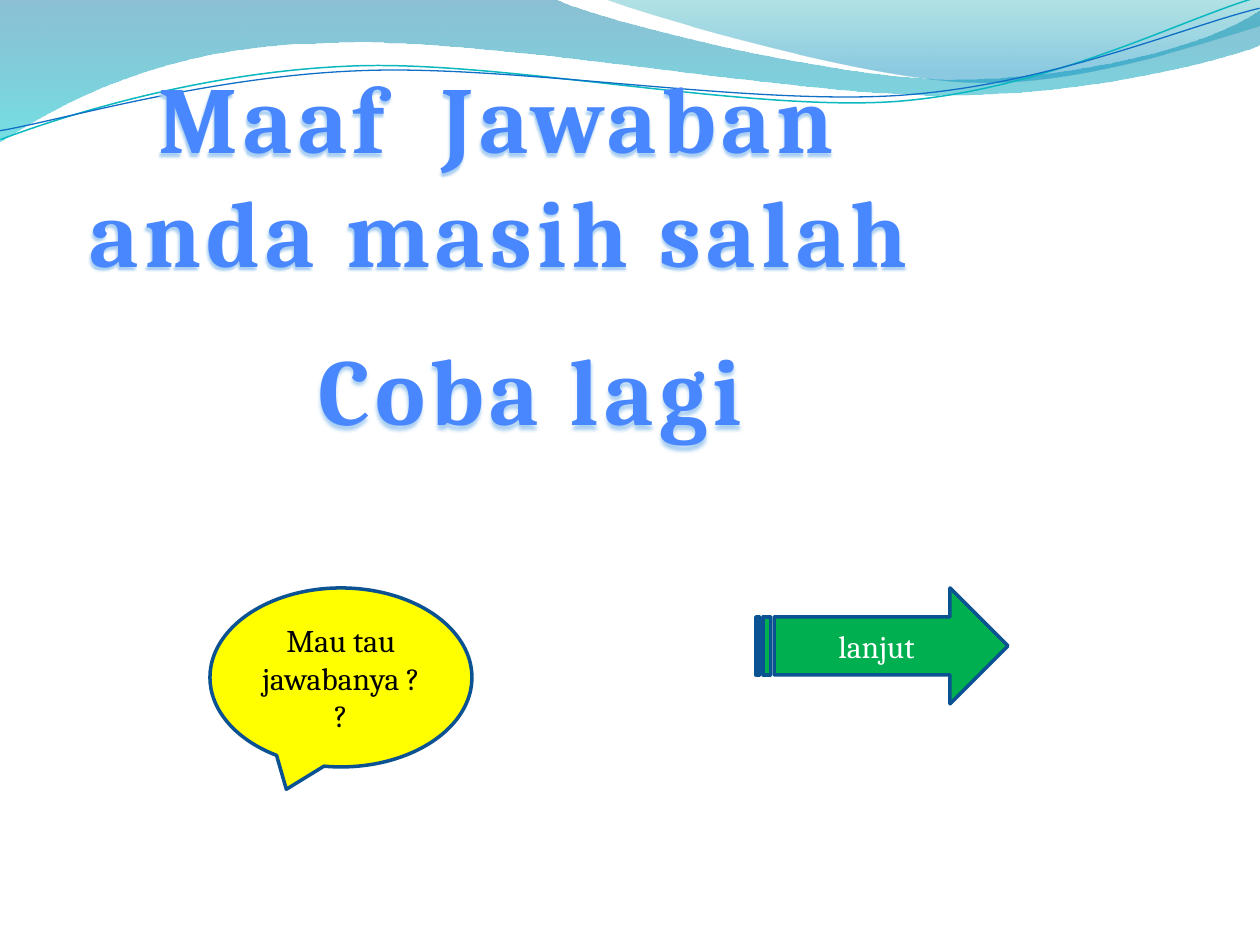
import pptx
import pptx.util
import pptx.dml.color
import pptx.enum.shapes
import pptx.enum.text
import pptx.oxml
import pptx.oxml.ns
import lxml.etree

EMU_PER_PX = 914400 / 126
FONT = "Cambria"
RIPPLE_TILT = 357.3
COLOURS = {
    "heading": "4987FF",
    "glow": "A9CFF2",
    "outline": "0B5292",
    "arrow": "00B050",
    "callout": "FFFF00",
    "white": "FFFFFF",
    "black": "000000",
    "wave_deep": "0074A1",
    "wave_aqua": "00C6CF",
    "crest_teal": "00A1A9",
    "crest_blue": "008BBF",
    "line_teal": "0AB8BF",
    "line_blue": "0F6FC6",
}


def px(value):
    """Turn pixels into EMU."""
    return pptx.util.Emu(round(value * EMU_PER_PX))


def colour(name):
    """Return a named colour."""
    return pptx.dml.color.RGBColor.from_string(COLOURS[name])


def add_outline(page, points, kinds, close):
    """Draw a freeform whose kinds name each piece L for line or C for curve."""
    vertices = [(px(x), px(y)) for x, y in points]
    builder = page.shapes.build_freeform(*vertices[0], scale=1.0)
    builder.add_line_segments(vertices[1:], close=close)
    shape = builder.convert_to_shape()
    shape.shadow.inherit = False
    pieces = iter(list(shape._element.iter(pptx.oxml.ns.qn("a:lnTo"))))
    for kind in kinds:
        piece = next(pieces)
        if kind == "C":
            bend = lxml.etree.Element(pptx.oxml.ns.qn("a:cubicBezTo"))
            piece.addprevious(bend)
            for corner in (piece, next(pieces), next(pieces)):
                bend.append(corner[0])
                corner.getparent().remove(corner)
    return shape


def add_wave(page, points, kinds, stops):
    """Add a wave filled from top to bottom with see-through colours."""
    wave = add_outline(page, points, kinds, close=True)
    wave.line.fill.background()
    wave.fill.gradient()
    wave.fill.gradient_angle = 270
    for stop, (position, name, opacity) in zip(wave.fill.gradient_stops, stops):
        stop.position = position
        stop.color.rgb = colour(name)
    tints = wave._element.iter(pptx.oxml.ns.qn("a:srgbClr"))
    for tint, (position, name, opacity) in zip(tints, stops):
        alpha = lxml.etree.SubElement(tint, pptx.oxml.ns.qn("a:alpha"))
        alpha.set("val", str(opacity * 1000))


def add_ripple(page, points, name, width):
    """Add a thin, slightly tilted open curve."""
    ripple = add_outline(page, points, "CCC", close=False)
    ripple.fill.background()
    ripple.line.color.rgb = colour(name)
    ripple.line.width = pptx.util.Pt(width)
    ripple.rotation = RIPPLE_TILT
    return ripple


def write_text(box, text, size=18, name="black", bold=False, spacing=0, anchor="MIDDLE"):
    """Put centred text in a box."""
    frame = box.text_frame
    frame.word_wrap = True
    frame.vertical_anchor = getattr(pptx.enum.text.MSO_ANCHOR, anchor)
    para = frame.paragraphs[0]
    para.alignment = pptx.enum.text.PP_ALIGN.CENTER
    span = para.add_run()
    span.text = text
    span.font.name = FONT
    span.font.size = pptx.util.Pt(size)
    span.font.bold = bold
    span.font.color.rgb = colour(name)
    if spacing:
        span._r.get_or_add_rPr().set("spc", str(spacing * 100))


def place(box, left, top, width, height):
    """Set a box's position and size in pixels."""
    box.left, box.top, box.width, box.height = map(px, (left, top, width, height))


def add_glow(box):
    """Give the text of an unfilled box a soft shadow."""
    box.fill.background()
    box._element.spPr.append(pptx.oxml.parse_xml(
        f'<a:effectLst {pptx.oxml.ns.nsdecls("a")}>'
        '<a:outerShdw blurRad="12700" dist="25400" dir="7200000" algn="tl" rotWithShape="0">'
        f'<a:srgbClr val="{COLOURS["glow"]}"/></a:outerShdw></a:effectLst>'))


def write_heading(box, text, bounds):
    """Format a box as a large glowing heading."""
    place(box, *bounds)
    write_text(box, text, size=54, name="heading", bold=True, spacing=3, anchor="TOP")
    box.text_frame.auto_size = pptx.enum.text.MSO_AUTO_SIZE.SHAPE_TO_FIT_TEXT
    add_glow(box)


def add_button(page, kind, text, bounds, fill, text_colour):
    """Add an outlined preset shape with a label."""
    preset = getattr(pptx.enum.shapes.MSO_SHAPE, kind)
    button = page.shapes.add_shape(preset, *map(px, bounds))
    button.shadow.inherit = False
    button.fill.solid()
    button.fill.fore_color.rgb = colour(fill)
    button.line.color.rgb = colour("outline")
    button.line.width = pptx.util.Pt(2)
    write_text(button, text, name=text_colour)


def add_waves(page):
    """Add the waves and ripples along the top."""
    band = [(0, 0), (554, -1),
            (600, 21), (837, 79), (955, 79), (1075, 79), (1207, 47), (1260, 11),
            (1261, 45),
            (1239, 55), (1096, 96), (940, 95), (784, 95), (481, 35), (324, 43),
            (163, 45), (58, 105), (-1, 142), (0, 0)]
    add_wave(page, band, "LCCLCCCL", [(0, "wave_deep", 45), (1, "wave_aqua", 55)])
    crest = [(604, -1),
             (641, 14), (859, 78), (969, 82), (1079, 87), (1211, 40), (1260, 26),
             (1260, 0), (604, -1)]
    add_wave(page, crest, "CCLL", [(0, "crest_teal", 30), (0.8, "crest_blue", 45)])
    teal = [(-2, 110), (59, 90), (200, 52), (350, 53), (499, 53),
            (745, 118), (896, 114), (1049, 109), (1184, 45), (1260, 27)]
    blue = [(-2, 101), (57, 94), (207, 57), (357, 58), (509, 58),
            (749, 112), (902, 108), (1052, 104), (1188, 52), (1262, 38)]
    page.shapes.add_group_shape([
        add_ripple(page, teal, "line_teal", 0.85),
        add_ripple(page, blue, "line_blue", 0.75)])


def main():
    """Build the slide and save it."""
    deck = pptx.Presentation()
    deck.slide_width, deck.slide_height = px(1260), px(945)
    page = deck.slides.add_slide(deck.slide_layouts[5])
    add_waves(page)
    title = page.shapes.title
    page.shapes._spTree.append(title._element)
    write_heading(title, "Maaf  Jawaban anda masih salah", (53, 53, 892, 242))
    retry = page.shapes.add_textbox(0, 0, 0, 0)
    write_heading(retry, "Coba lagi", (126, 325, 809, 127))
    add_button(page, "STRIPED_RIGHT_ARROW", "lanjut", (756, 588, 252, 116), "arrow", "white")
    add_button(page, "OVAL_CALLOUT", "Mau tau jawabanya ??", (210, 588, 262, 179),
               "callout", "black")
    deck.save("out.pptx")


if __name__ == "__main__":
    main()
